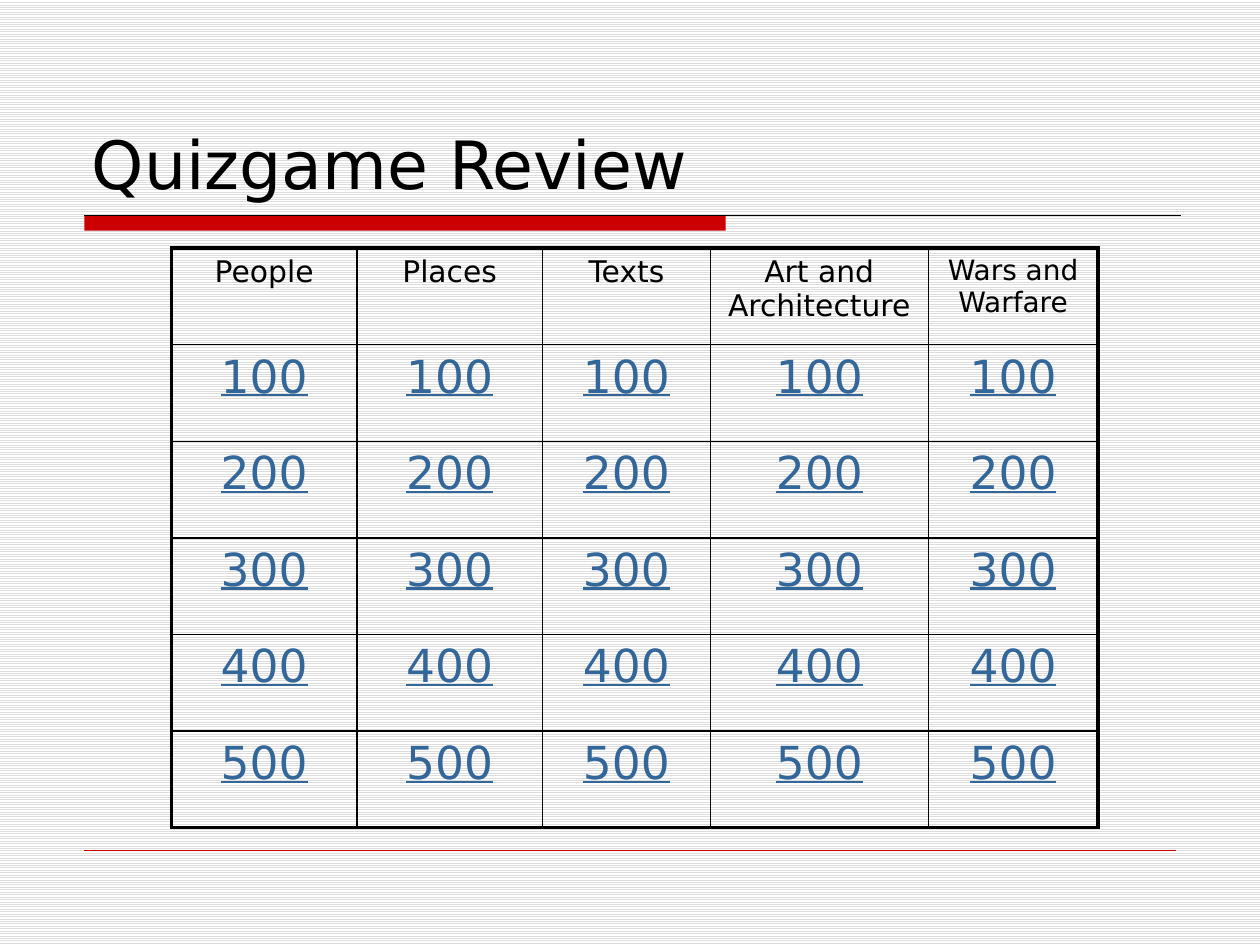
from dataclasses import dataclass

from lxml import etree
from pptx import Presentation
from pptx import util as u
from pptx.dml.color import RGBColor
from pptx.enum import dml, shapes, text
from pptx.oxml import ns

BLACK = RGBColor(0x00, 0x00, 0x00)
WHITE = RGBColor(0xFF, 0xFF, 0xFF)
GREY = RGBColor(0xDD, 0xDD, 0xDD)
RED = RGBColor(0xCC, 0x00, 0x00)
BLUE = RGBColor(0x33, 0x66, 0x99)
FONT = "DejaVu Sans"
THIN, THICK = 1, 2.25


@dataclass
class Topic:
    name: str
    width: float
    size: float = 17


@dataclass
class Rule:
    left: float
    right: float
    top: float
    weight: float
    color: RGBColor


TOPICS = [
    Topic("People", 106),
    Topic("Places", 106),
    Topic("Texts", 96),
    Topic("Art and Architecture", 124.5),
    Topic("Wars and Warfare", 97, 16),
]
POINTS = [100, 200, 300, 400, 500]
ROW = 55.2
RULES = [
    Rule(48.24, 674.64, 123.12, 0.75, BLACK),
    Rule(48.24, 671.76, 486, 0.25, RED),
]


def add_run(para, words: str, size: float, color: RGBColor, under: bool = False) -> None:
    run = para.add_run()
    run.text = words
    font = run.font
    font.name, font.size = FONT, u.Pt(size)
    font.color.rgb = color
    if under:
        font.underline = True


def draw_rule(slide, rule: Rule) -> None:
    line = slide.shapes.add_connector(
        shapes.MSO_CONNECTOR.STRAIGHT,
        u.Pt(rule.left), u.Pt(rule.top), u.Pt(rule.right), u.Pt(rule.top))
    line.line.color.rgb = rule.color
    line.line.width = u.Pt(rule.weight)
    etree.SubElement(line._element.spPr, ns.qn("a:effectLst"))


def set_edge(cell, side: str, weight: float) -> None:
    props = cell._tc.get_or_add_tcPr()
    edge = etree.SubElement(props, ns.qn(f"a:ln{side}"), w=str(u.Pt(weight)))
    fill = etree.SubElement(edge, ns.qn("a:solidFill"))
    etree.SubElement(fill, ns.qn("a:srgbClr"), val=str(BLACK))


def draw_board(slide) -> None:
    rows, cols = len(POINTS) + 1, len(TOPICS)
    width = sum(topic.width for topic in TOPICS)
    table = slide.shapes.add_table(
        rows, cols, u.Pt(98), u.Pt(141.8), u.Pt(width), u.Pt(rows * ROW)).table
    table.first_row = table.horz_banding = False
    for row in table.rows:
        row.height = u.Pt(ROW)
    for c, topic in enumerate(TOPICS):
        table.columns[c].width = u.Pt(topic.width)
        for r in range(rows):
            cell = table.cell(r, c)
            # Heavy frame outside, thin lines inside
            outer = {"L": c == 0, "R": c == cols - 1, "T": r == 0, "B": r == rows - 1}
            for side, heavy in outer.items():
                set_edge(cell, side, THICK if heavy else THIN)
            cell.fill.background()
            para = cell.text_frame.paragraphs[0]
            para.alignment = text.PP_ALIGN.CENTER
            if r == 0:
                add_run(para, topic.name, topic.size, BLACK)
            else:
                add_run(para, str(POINTS[r - 1]), 26, BLUE, under=True)


def main() -> None:
    deck = Presentation()
    deck.slide_width, deck.slide_height = u.Pt(720), u.Pt(540)
    slide = deck.slides.add_slide(deck.slide_layouts[5])

    # Striped ground
    ground = slide.background.fill
    ground.patterned()
    ground.pattern = dml.MSO_PATTERN.LIGHT_HORIZONTAL
    ground.fore_color.rgb = GREY
    ground.back_color.rgb = WHITE

    # Title
    title = slide.shapes.title
    title.left, title.top = u.Pt(45.36), u.Pt(23.76)
    title.width, title.height = u.Pt(630), u.Pt(95.76)
    frame = title.text_frame
    frame.vertical_anchor = text.MSO_ANCHOR.BOTTOM
    frame.paragraphs[0].alignment = text.PP_ALIGN.LEFT
    add_run(frame.paragraphs[0], "Quizgame Review", 38, BLACK)

    # Red bar and rules
    bar = slide.shapes.add_shape(
        shapes.MSO_SHAPE.RECTANGLE, u.Pt(48.24), u.Pt(123.12), u.Pt(366.48), u.Pt(8.64))
    bar.shadow.inherit = False
    bar.fill.solid()
    bar.fill.fore_color.rgb = RED
    bar.line.fill.background()
    for rule in RULES:
        draw_rule(slide, rule)

    # Quiz board
    draw_board(slide)
    deck.save("out.pptx")


if __name__ == "__main__":
    main()
